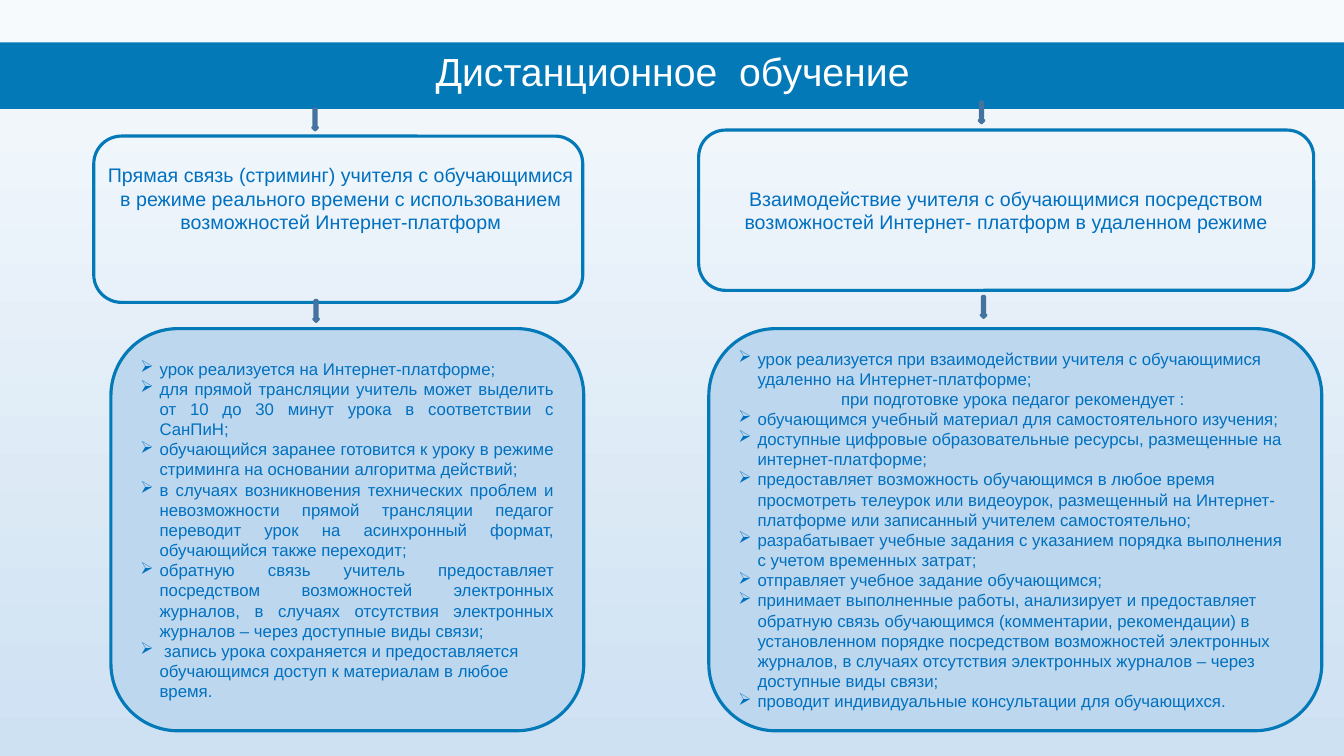
"""Builds the slide on the two forms of distance learning."""
from dataclasses import dataclass

import pptx
import pptx.dml.color
import pptx.enum.shapes
import pptx.enum.text
import pptx.oxml.ns
import pptx.util
from lxml import etree

RGBColor = pptx.dml.color.RGBColor
Shape = pptx.enum.shapes.MSO_SHAPE
Align = pptx.enum.text.PP_ALIGN
Anchor = pptx.enum.text.MSO_ANCHOR

EMU_PER_PX = 9144
FONT = "Arial"
BULLET = "➢"
BULLET_INDENT = 19

SKY_TOP = RGBColor(0xF7, 0xFA, 0xFD)
SKY_BOTTOM = RGBColor(0xCE, 0xE1, 0xF2)
BAND = RGBColor(0x03, 0x79, 0xB7)
PANEL = RGBColor(0xBD, 0xD7, 0xEE)
INK = RGBColor(0x00, 0x70, 0xC0)
WHITE = RGBColor(0xFF, 0xFF, 0xFF)
ARROW_FILL = RGBColor(0x5B, 0x9B, 0xD5)
ARROW_LINE = RGBColor(0x43, 0x73, 0x9E)


@dataclass(frozen=True)
class Box:
    left: int
    top: int
    width: int
    height: int

    def emu(self) -> list[int]:
        return [px(n) for n in (self.left, self.top, self.width, self.height)]


@dataclass(frozen=True)
class Line:
    text: str
    align: Align | None = None
    bulleted: bool = True


@dataclass(frozen=True)
class Panel:
    box: Box
    lines: tuple[Line, ...]


TITLE = Line("Дистанционное  обучение", Align.CENTER, False)
STREAMING = Line(
    "Прямая связь (стриминг) учителя с обучающимися в режиме реального времени "
    "с использованием возможностей Интернет-платформ", Align.CENTER, False)
REMOTE = Line(
    "Взаимодействие учителя с обучающимися посредством возможностей "
    "Интернет- платформ в удаленном режиме", Align.CENTER, False)

PANELS = (
    Panel(Box(110, 326, 469, 399), (
        Line("урок реализуется на Интернет-платформе;", Align.JUSTIFY),
        Line("для прямой трансляции учитель может выделить от 10 до 30 минут "
             "урока в соответствии с СанПиН;", Align.JUSTIFY),
        Line("обучающийся заранее готовится к уроку в режиме стриминга "
             "на основании алгоритма действий;", Align.JUSTIFY),
        Line("в случаях возникновения технических проблем и невозможности "
             "прямой трансляции педагог переводит урок на асинхронный формат, "
             "обучающийся также переходит;", Align.JUSTIFY),
        Line("обратную связь учитель предоставляет посредством возможностей "
             "электронных журналов, в случаях отсутствия электронных журналов "
             "– через доступные виды связи;", Align.JUSTIFY),
        Line(" запись урока сохраняется и предоставляется обучающимся доступ "
             "к материалам в любое время."),
    )),
    Panel(Box(703, 326, 608, 399), (
        Line("урок реализуется при взаимодействии учителя с обучающимися "
             "удаленно на Интернет-платформе;"),
        Line("при подготовке урока педагог рекомендует : ", Align.CENTER, False),
        Line("обучающимся учебный материал для самостоятельного изучения;"),
        Line("доступные цифровые образовательные ресурсы, размещенные "
             "на интернет-платформе;"),
        Line("предоставляет возможность обучающимся в любое время просмотреть "
             "телеурок или видеоурок, размещенный на Интернет-платформе "
             "или записанный учителем самостоятельно;"),
        Line("разрабатывает учебные задания с указанием порядка выполнения "
             "с учетом временных затрат;"),
        Line("отправляет учебное задание обучающимся;"),
        Line("принимает выполненные работы, анализирует и предоставляет обратную "
             "связь обучающимся (комментарии, рекомендации) в установленном "
             "порядке посредством возможностей электронных журналов, в случаях "
             "отсутствия электронных журналов – через доступные виды связи;"),
        Line("проводит индивидуальные консультации для обучающихся."),
    )),
)

ARROWS = tuple(Box(left, top, 5, 21)
               for left, top in ((310, 108), (971, 101), (311, 298), (973, 294)))


def px(length: int) -> int:
    """Turns px into EMU."""
    return pptx.util.Emu(length * EMU_PER_PX)


def add_bullet(paragraph) -> None:
    """Gives a paragraph an arrow bullet with a hanging indent."""
    properties = paragraph._p.get_or_add_pPr()
    properties.set("marL", str(px(BULLET_INDENT)))
    properties.set("indent", str(px(-BULLET_INDENT)))
    bullet = etree.SubElement(properties, pptx.oxml.ns.qn("a:buChar"))
    bullet.set("char", BULLET)


def write(frame, lines: tuple[Line, ...], size: int, colour: RGBColor,
          anchor: Anchor) -> None:
    """Fills a text frame with lines of one style."""
    frame.word_wrap = True
    frame.vertical_anchor = anchor
    for number, line in enumerate(lines):
        paragraph = frame.add_paragraph() if number else frame.paragraphs[0]
        paragraph.text = line.text
        paragraph.alignment = line.align or Align.LEFT
        if line.bulleted:
            add_bullet(paragraph)
        paragraph.font.name = FONT
        paragraph.font.size = pptx.util.Pt(size)
        paragraph.font.color.rgb = colour


def add_figure(slide, kind: Shape, box: Box, fill: RGBColor | None,
               outline: RGBColor | None, weight: float = 2.25):
    """Draws a flat preset shape."""
    figure = slide.shapes.add_shape(kind, *box.emu())
    figure.shadow.inherit = False
    if fill is None:
        figure.fill.background()
    else:
        figure.fill.solid()
        figure.fill.fore_color.rgb = fill
    if outline is None:
        figure.line.fill.background()
    else:
        figure.line.color.rgb = outline
        figure.line.width = pptx.util.Pt(weight)
    return figure


def add_label(slide, box: Box, line: Line, size: int, colour: RGBColor) -> None:
    """Adds a text box holding one line."""
    label = slide.shapes.add_textbox(*box.emu())
    write(label.text_frame, (line,), size, colour, Anchor.TOP)


def paint_background(slide) -> None:
    """Shades the slide from top to bottom."""
    sky = slide.background.fill
    sky.gradient()
    sky.gradient_angle = 270
    for stop, colour in zip(sky.gradient_stops, (SKY_TOP, SKY_BOTTOM)):
        stop.color.rgb = colour


def main() -> None:
    """Builds and saves the slide."""
    deck = pptx.Presentation()
    deck.slide_width, deck.slide_height = px(1333), px(750)
    slide = deck.slides.add_slide(deck.slide_layouts[6])
    paint_background(slide)

    add_figure(slide, Shape.RECTANGLE, Box(0, 42, 1333, 66), BAND, None)
    add_label(slide, Box(291, 42, 752, 57), TITLE, 28, WHITE)

    add_figure(slide, Shape.ROUNDED_RECTANGLE, Box(93, 135, 485, 165), None, BAND)
    remote = add_figure(slide, Shape.ROUNDED_RECTANGLE, Box(693, 129, 610, 159),
                        None, BAND)
    write(remote.text_frame, (REMOTE,), 14, INK, Anchor.MIDDLE)
    add_label(slide, Box(97, 157, 482, 81), STREAMING, 14, INK)

    for panel in PANELS:
        figure = add_figure(slide, Shape.ROUNDED_RECTANGLE, panel.box, PANEL, BAND)
        write(figure.text_frame, panel.lines, 12, INK, Anchor.MIDDLE)
    for arrow in ARROWS:
        add_figure(slide, Shape.DOWN_ARROW, arrow, ARROW_FILL, ARROW_LINE, 2)
    deck.save("out.pptx")


if __name__ == "__main__":
    main()
